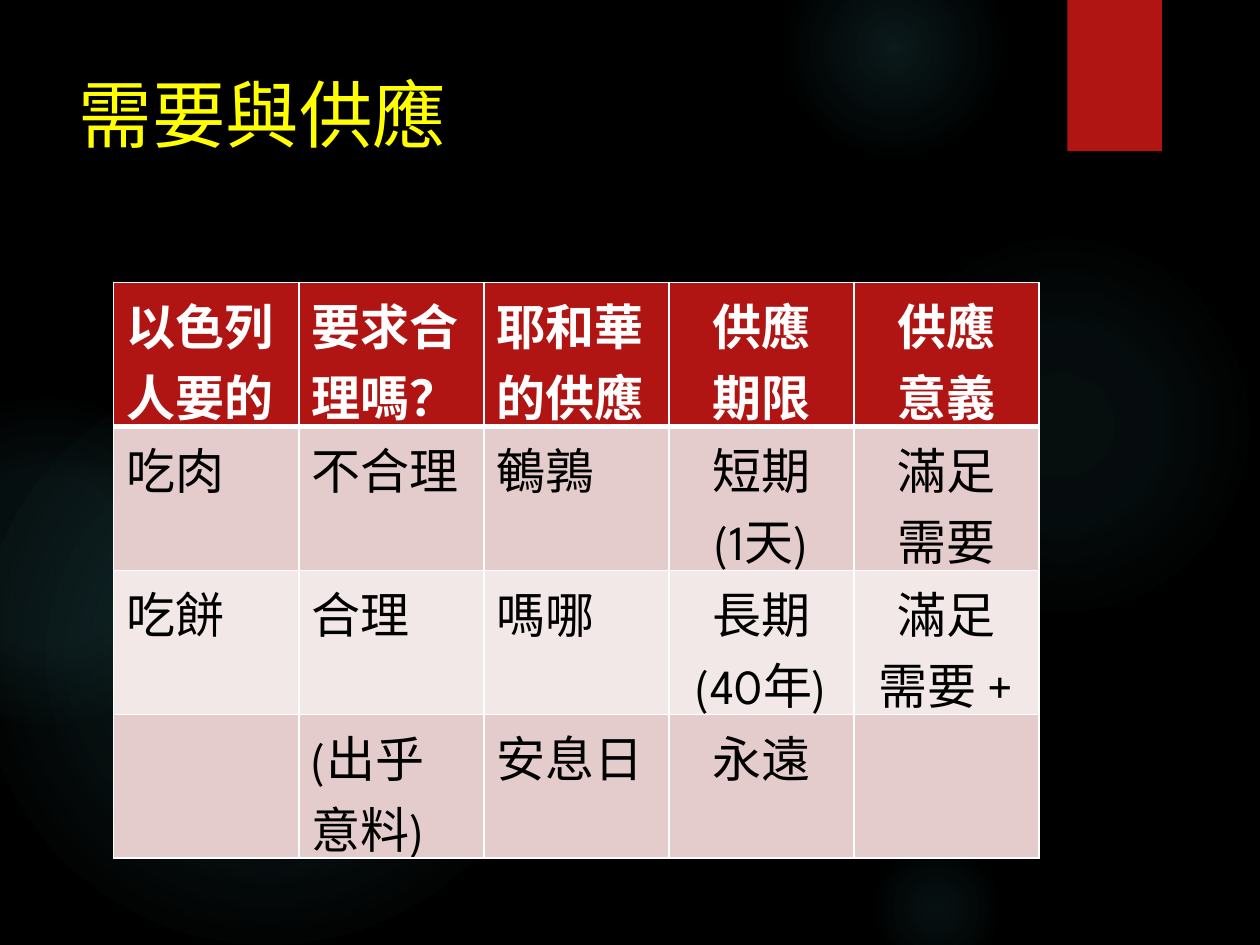
from dataclasses import dataclass

from lxml import etree
from pptx import Presentation
from pptx.dml.color import RGBColor
from pptx.enum.shapes import MSO_SHAPE
from pptx.enum.text import MSO_ANCHOR, PP_ALIGN
from pptx.oxml import parse_xml
from pptx.oxml.ns import qn
from pptx.util import Pt

OVAL = MSO_SHAPE.OVAL
RECTANGLE = MSO_SHAPE.RECTANGLE
TOP = MSO_ANCHOR.TOP
LEFT = PP_ALIGN.LEFT
CENTER = PP_ALIGN.CENTER

FONT = "League Spartan"
BLACK = "000000"
WHITE = "FFFFFF"
YELLOW = "FFFF00"
RED = "B01513"
TEAL = "50B9C1"
BAND_DARK = "E4CCCC"
BAND_LIGHT = "F2E8E7"
DRAWING_NS = "http://schemas.openxmlformats.org/drawingml/2006/main"

COLUMN_WIDTH = 105.75
ROW_HEIGHT = 82.25
FIRST_CENTERED_COLUMN = 3


@dataclass(frozen=True)
class Glow:
    left: float
    top: float
    diameter: float
    core_alpha: int
    middle_alpha: int
    fade_stop: int


@dataclass(frozen=True)
class TableRow:
    cells: tuple[str, ...]
    fill: str
    color: str = BLACK
    bold: bool = False
    top_border: float = 1
    bottom_border: float = 1


GLOWS = (
    Glow(496, 132, 222, 7, 6, 69),
    Glow(448, -36, 126, 14, 7, 73),
    Glow(496, 480, 78, 9, 5, 66),
    Glow(-12, 210, 330, 11, 10, 75),
    Glow(-66, 228, 186, 8, 8, 72),
)

ROWS = (
    TableRow(
        ("以色列人要的", "要求合理嗎？", "耶和華的供應", "供應\n期限", "供應\n意義"),
        RED, WHITE, bold=True, bottom_border=3,
    ),
    TableRow(("吃肉", "不合理", "鵪鶉", "短期\n(1天)", "滿足\n需要"),
             BAND_DARK, top_border=3),
    TableRow(("吃餅", "合理", "嗎哪", "長期\n(40年)", "滿足\n需要 +"), BAND_LIGHT),
    TableRow(("", "(出乎\n意料)", "安息日", "永遠", ""), BAND_DARK),
)


def rgb(color: str) -> RGBColor:
    return RGBColor.from_string(color)


def style_text(text_frame, size: float, color: str, bold: bool = False,
               alignment=LEFT) -> None:
    for paragraph in text_frame.paragraphs:
        paragraph.alignment = alignment
        for run in paragraph.runs:
            run.font.name = FONT
            run.font.size = Pt(size)
            run.font.bold = bold
            run.font.color.rgb = rgb(color)


def draw_glow(slide, glow: Glow) -> None:
    circle = slide.shapes.add_shape(
        OVAL, Pt(glow.left), Pt(glow.top), Pt(glow.diameter), Pt(glow.diameter)
    )
    circle.shadow.inherit = False
    circle.line.fill.background()
    stops = "".join(
        f'<a:gs pos="{position * 1000}"><a:srgbClr val="{TEAL}">'
        f'<a:alpha val="{alpha * 1000}"/></a:srgbClr></a:gs>'
        for position, alpha in (
            (0, glow.core_alpha), (36, glow.middle_alpha), (glow.fade_stop, 0)
        )
    )
    gradient = parse_xml(
        f'<a:gradFill xmlns:a="{DRAWING_NS}" rotWithShape="1">'
        f'<a:gsLst>{stops}</a:gsLst><a:path path="circle">'
        '<a:fillToRect l="50000" t="50000" r="50000" b="50000"/>'
        '</a:path></a:gradFill>'
    )
    circle._element.spPr.find(qn("a:prstGeom")).addnext(gradient)


def draw_ribbon(slide) -> None:
    ribbon = slide.shapes.add_shape(RECTANGLE, Pt(610), Pt(0), Pt(54), Pt(86.4))
    ribbon.shadow.inherit = False
    ribbon.fill.solid()
    ribbon.fill.fore_color.rgb = rgb(RED)
    ribbon.line.fill.background()


def draw_title(slide) -> None:
    title = slide.shapes.add_textbox(Pt(38), Pt(36), Pt(556), Pt(110)).text_frame
    title.word_wrap = True
    title.vertical_anchor = TOP
    title.text = "需要與供應"
    style_text(title, 42, YELLOW)


def add_border(cell, side: str, width: float) -> None:
    border = etree.SubElement(
        cell._tc.get_or_add_tcPr(), qn(f"a:{side}"), w=str(Pt(width))
    )
    solid = etree.SubElement(border, qn("a:solidFill"))
    etree.SubElement(solid, qn("a:srgbClr"), val=WHITE)


def fill_cell(cell, text: str, row: TableRow, alignment) -> None:
    cell.text_frame.text = text
    style_text(cell.text_frame, 28, row.color, row.bold, alignment)
    for side, width in (
        ("lnL", 1), ("lnR", 1), ("lnT", row.top_border), ("lnB", row.bottom_border)
    ):
        add_border(cell, side, width)
    cell.fill.solid()
    cell.fill.fore_color.rgb = rgb(row.fill)


def draw_table(slide, rows: tuple[TableRow, ...]) -> None:
    column_count = len(rows[0].cells)
    table = slide.shapes.add_table(
        len(rows), column_count, Pt(65), Pt(161.5),
        Pt(COLUMN_WIDTH * column_count), Pt(ROW_HEIGHT * len(rows)),
    ).table
    for column in table.columns:
        column.width = Pt(COLUMN_WIDTH)
    for row_index, row in enumerate(rows):
        table.rows[row_index].height = Pt(ROW_HEIGHT)
        for column_index, text in enumerate(row.cells):
            alignment = CENTER if column_index >= FIRST_CENTERED_COLUMN else LEFT
            fill_cell(table.cell(row_index, column_index), text, row, alignment)


def main() -> None:
    presentation = Presentation()
    presentation.slide_width = Pt(720)
    presentation.slide_height = Pt(540)
    slide = presentation.slides.add_slide(presentation.slide_layouts[6])
    slide.background.fill.solid()
    slide.background.fill.fore_color.rgb = rgb(BLACK)
    for glow in GLOWS:
        draw_glow(slide, glow)
    draw_ribbon(slide)
    draw_title(slide)
    draw_table(slide, ROWS)
    presentation.save("out.pptx")


if __name__ == "__main__":
    main()
